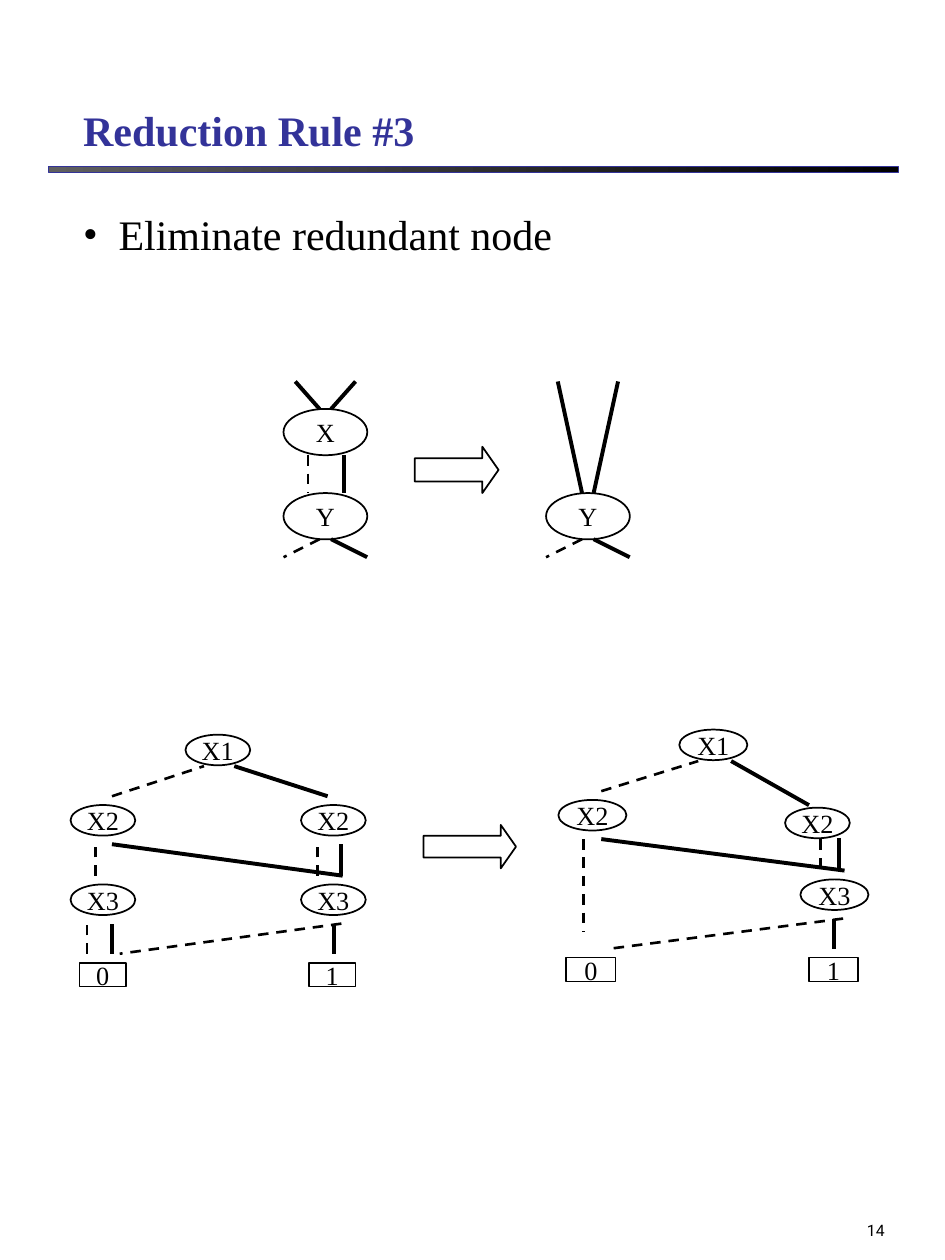
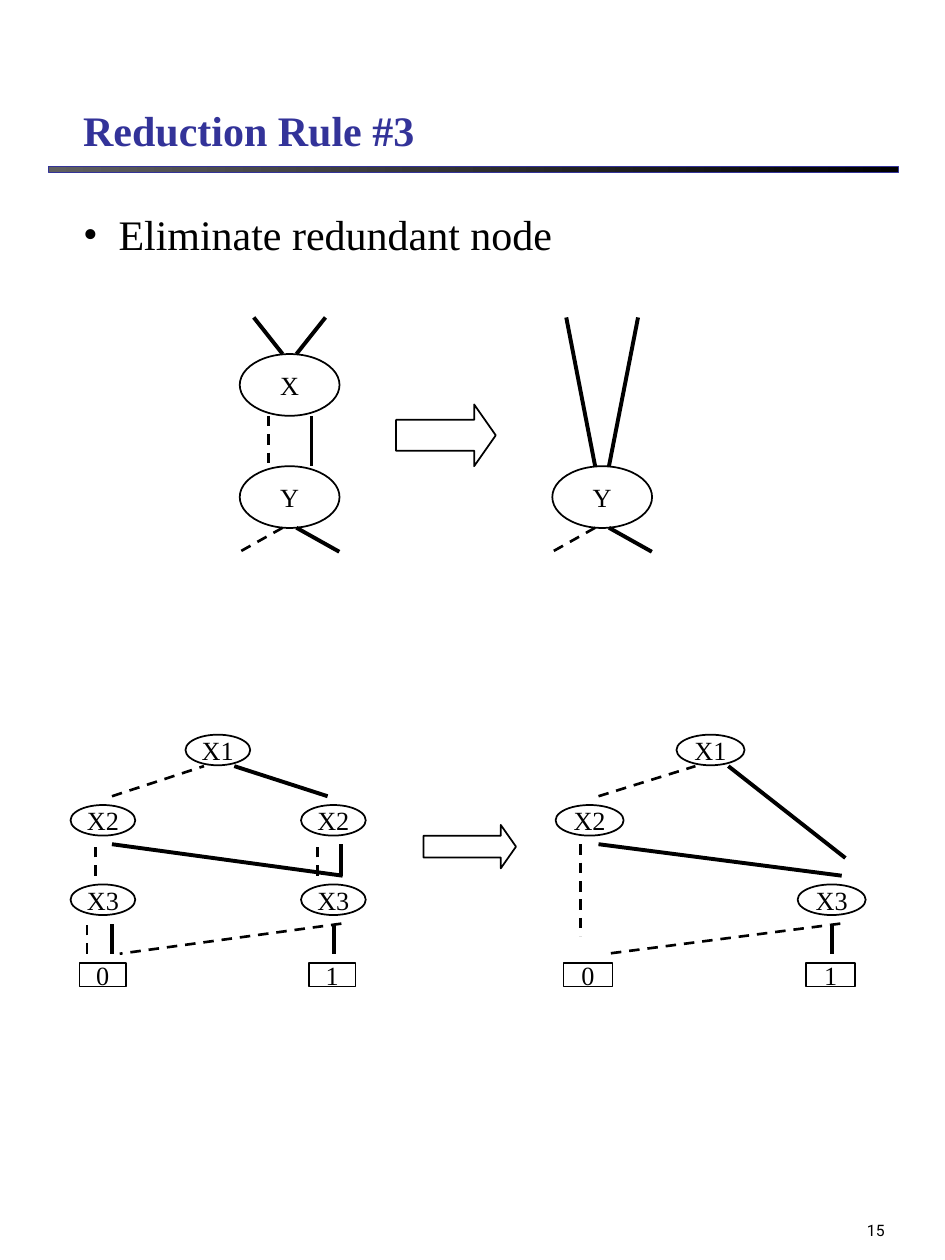
from dataclasses import dataclass

from lxml.etree import SubElement
from pptx import Presentation
from pptx.dml.color import RGBColor
from pptx.enum.dml import MSO_LINE
from pptx.enum.shapes import MSO_CONNECTOR, MSO_SHAPE as SHAPE
from pptx.enum.text import MSO_ANCHOR as ANCHOR, MSO_AUTO_SIZE as AUTO_SIZE, PP_ALIGN as ALIGN
from pptx.oxml.ns import qn
from pptx.slide import Slide
from pptx.util import Pt

COLORS = {"ink": "000000", "title": "333399", "bar_start": "5F5F5F"}
SERIF = "Times New Roman"
MARGIN, CONTENT_WIDTH = 40.3, 459.4
BULLET_INDENT = 20.2
TERMINAL_HEIGHT, NODE_HEIGHT = 13.7, 17.5
# Tops of the rows in the decision diagrams
X1_ROW, X2_ROW, X3_ROW, TERMINAL_ROW = 419.8, 460, 505.4, 550.1


def rgb(name):
    return RGBColor.from_string(COLORS[name])


def place(shape, left, top, width, height):
    shape.left, shape.top, shape.width, shape.height = map(Pt, (left, top, width, height))


def write(shape, text, *, size=15, font=SERIF, color="ink", bold=False,
          align=ALIGN.LEFT, anchor=ANCHOR.TOP, wrap=True):
    frame = shape.text_frame
    frame.auto_size = AUTO_SIZE.NONE
    frame.word_wrap = wrap
    frame.vertical_anchor = anchor
    paragraph = frame.paragraphs[0]
    paragraph.alignment = align
    paragraph.space_before = Pt(0)
    run = paragraph.add_run()
    run.text = text
    run.font.name, run.font.size, run.font.bold = font, Pt(size), bold
    run.font.color.rgb = rgb(color)
    return paragraph


def add_bullet(paragraph):
    properties = paragraph._p.get_or_add_pPr()
    properties.set("marL", str(Pt(BULLET_INDENT)))
    properties.set("indent", str(-Pt(BULLET_INDENT)))
    bullet_color = SubElement(properties, qn("a:buClr"))
    SubElement(bullet_color, qn("a:srgbClr"), val=COLORS["ink"])
    SubElement(properties, qn("a:buFont"), typeface=SERIF)
    SubElement(properties, qn("a:buChar"), char="•")


@dataclass
class Diagram:
    """Draws on a slide in its own coordinates, shifted and scaled."""
    slide: Slide
    left: float = 0
    top: float = 0
    scale_x: float = 1
    scale_y: float = 1

    def point(self, x, y):
        return Pt(self.left + x * self.scale_x), Pt(self.top + y * self.scale_y)

    def outline(self, kind, x, y, width, height):
        shape = self.slide.shapes.add_shape(
            kind, *self.point(x, y), Pt(width * self.scale_x), Pt(height * self.scale_y))
        shape.shadow.inherit = False
        shape.fill.background()
        shape.line.color.rgb = rgb("ink")
        shape.line.width = Pt(1)
        return shape

    def node(self, label, x, y, width, height=NODE_HEIGHT, kind=SHAPE.OVAL):
        write(self.outline(kind, x, y, width, height), label,
              align=ALIGN.CENTER, anchor=ANCHOR.MIDDLE, wrap=False)

    def terminal(self, label, x, width):
        self.node(label, x, TERMINAL_ROW, width, TERMINAL_HEIGHT, SHAPE.RECTANGLE)

    def arrow(self, x, y, width, height):
        arrow = self.outline(SHAPE.RIGHT_ARROW, x, y, width, height)
        arrow.adjustments[0], arrow.adjustments[1] = 0.5, 0.35

    def edges(self, *ends, dashed=False):
        for x1, y1, x2, y2 in ends:
            edge = self.slide.shapes.add_connector(
                MSO_CONNECTOR.STRAIGHT, *self.point(x1, y1), *self.point(x2, y2))
            SubElement(edge.element.spPr, qn("a:effectLst"))
            edge.line.color.rgb = rgb("ink")
            edge.line.width = Pt(1.5 if dashed else 2.25)
            if dashed:
                edge.line.dash_style = MSO_LINE.DASH


def draw_rule(slide, left, top, scale_x=1, scale_y=1):
    """Show node X over Y, and Y alone once X is removed."""
    rule = Diagram(slide, left, top, scale_x, scale_y)
    width, height, reduced = 57, 35.3, 178.6
    x_top, y_top, low_end, toe = 20.9, 85, 120.2, 133.9
    rule.node("X", 0, x_top, width, height)
    for x in (0, reduced):
        rule.node("Y", x, y_top, width, height)
        rule.edges((x + 24.5, low_end, x, toe), dashed=True)
        rule.edges((x + 32.4, low_end, x + 56.9, toe))
    rule.edges((16.6, x_top + height, 16.6, y_top), dashed=True)
    rule.edges((41, x_top + height, 41, y_top))
    for x, lower_end in ((0, x_top), (reduced, y_top)):
        rule.edges((x + 24.5, lower_end, x + 8, 0), (x + 32.4, lower_end, x + 49, 0))
    rule.arrow(89.3, 49.7, width, height)


def draw_full_graph(slide):
    graph = Diagram(slide)
    width, low, high = 37, 40.3, 172
    graph.node("X1", 106, X1_ROW, width)
    for x in (low, high):
        graph.node("X2", x, X2_ROW, width)
        graph.node("X3", x, X3_ROW, width)
    graph.terminal("0", 45.4, 26.6)
    graph.terminal("1", 176.6, 26.6)
    graph.edges((64, 455, 116.6, 437.8), (54.7, 500.4, 54.7, 482.4),
                (181.4, 500.4, 181.4, 482.4), (49.7, 545, 49.7, 527.8),
                (195.1, 527.8, 68.4, 545), dashed=True)
    graph.edges((133.9, 437.8, 187.2, 455), (64, 482.4, 195.8, 500.4),
                (195.1, 482.4, 195.1, 500.4), (64, 545, 64, 527.8),
                (190.8, 527.8, 190.8, 545))
    graph.arrow(242, 471.4, 52.9, 24.8)


def draw_reduced_graph(slide, left=0, top=0, redundant_x2=False):
    graph = Diagram(slide, left, top)
    width = 38.9
    graph.node("X1", 386.6, X1_ROW, width)
    graph.node("X2", 317.5, X2_ROW, width)
    graph.node("X3", 455.8, X3_ROW, width)
    graph.terminal("0", 322, 28.1)
    graph.terminal("1", 460.6, 28.1)
    graph.edges((342, 455, 397.4, 437.8), (331.9, 482.4, 331.9, 535),
                (480.2, 527.8, 347, 545), dashed=True)
    graph.edges((342, 482.4, 481, 500.4), (475.2, 527.8, 475.2, 545))
    if redundant_x2:
        graph.node("X2", 447, 464.4, 37)
        graph.edges((416.2, 437.8, 460.7, 463), (478, 481.7, 478, 499.7))
        graph.edges((467.2, 499, 467.2, 481.7), dashed=True)
    else:
        graph.edges((416.2, 437.8, 483.1, 490.3))


def add_title_bar(slide):
    """Add the bar under the title to the slide's layout."""
    bar = slide.shapes.add_shape(SHAPE.RECTANGLE, Pt(27.4), Pt(95), Pt(486), Pt(3.6))
    bar.shadow.inherit = False
    bar.fill.gradient()
    bar.fill.gradient_angle = 0
    for stop, color in zip(bar.fill.gradient_stops, ("bar_start", "ink")):
        stop.color.rgb = rgb(color)
    bar.line.color.rgb = rgb("title")
    bar.line.width = Pt(0.25)
    slide.slide_layout.shapes.element.append(bar.element)


def add_rule_slide(deck, number):
    slide = deck.slides.add_slide(deck.slide_layouts[1])
    title, body = slide.placeholders
    place(title, MARGIN, 42.5, CONTENT_WIDTH, 49.7)
    write(title, "Reduction Rule #3", size=24, color="title", bold=True, anchor=ANCHOR.BOTTOM)
    place(body, MARGIN, 112.3, CONTENT_WIDTH, 43.2)
    body.text_frame.margin_top = Pt(7)
    add_bullet(write(body, "Eliminate redundant node", size=24))
    page_number = slide.shapes.add_textbox(Pt(400.3), Pt(663.8), Pt(112.3), Pt(48.2))
    write(page_number, str(number), size=9, font="Roboto",
          align=ALIGN.RIGHT, anchor=ANCHOR.BOTTOM)
    draw_full_graph(slide)
    return slide


def main():
    deck = Presentation()
    deck.slide_width, deck.slide_height = Pt(540), Pt(720)

    partly_reduced = add_rule_slide(deck, 14)
    add_title_bar(partly_reduced)
    draw_rule(partly_reduced, 162, 218, scale_x=0.84, scale_y=0.75)
    draw_reduced_graph(partly_reduced, left=1.6, top=-2.9, redundant_x2=True)

    fully_reduced = add_rule_slide(deck, 15)
    draw_rule(fully_reduced, 137, 181.4)
    draw_reduced_graph(fully_reduced)

    deck.save("out.pptx")


if __name__ == "__main__":
    main()
